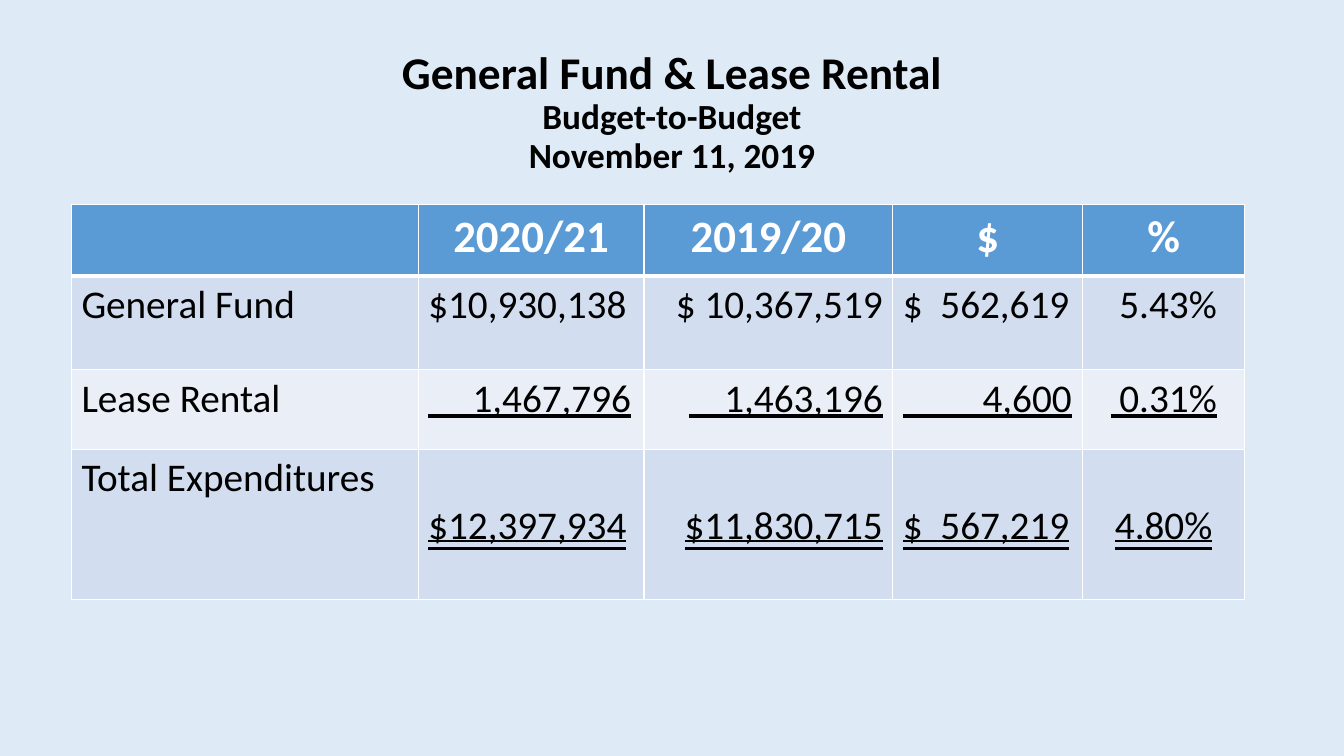
from lxml import etree
from pptx import Presentation
from pptx.dml.color import RGBColor
from pptx.enum.text import MSO_ANCHOR, MSO_AUTO_SIZE, MSO_TEXT_UNDERLINE_TYPE, PP_ALIGN
from pptx.oxml.ns import qn
from pptx.util import Cm, Pt

LEFT, CENTER, RIGHT = PP_ALIGN.LEFT, PP_ALIGN.CENTER, PP_ALIGN.RIGHT
MIDDLE = MSO_ANCHOR.MIDDLE
NO_AUTOFIT = MSO_AUTO_SIZE.NONE
SINGLE = MSO_TEXT_UNDERLINE_TYPE.SINGLE_LINE
DOUBLE = MSO_TEXT_UNDERLINE_TYPE.DOUBLE_LINE
TITLE_ONLY = 5

COLORS = {
    "background": "DEEBF7",
    "header": "5B9BD5",
    "odd": "D2DEEF",
    "even": "EAEFF7",
    "text": "000000",
    "white": "FFFFFF",
}
TITLE_LINES = [
    ("General Fund & Lease Rental", 32.4),
    ("Budget-to-Budget", 25.2),
    ("November 11, 2019", 25.2),
]
COLUMN_WIDTHS = [8.74, 5.69, 6.27, 4.78, 4.09]
ROW_HEIGHTS = [1.8, 2.36, 2.01, 3.78]
ALIGNMENTS = [LEFT, LEFT, RIGHT, LEFT, CENTER]
BUDGET = [
    ["", "2020/21", "2019/20", "$", "%"],
    ["General Fund", "$10,930,138", "$ 10,367,519", "$  562,619", " 5.43%"],
    ["Lease Rental", "     1,467,796", "    1,463,196", "         4,600", " 0.31%"],
    ["Total Expenditures", "$12,397,934", "$11,830,715", "$  567,219", "4.80%"],
]
ROW_FILLS = ["header", "odd", "even", "odd"]
UNDERLINES = [None, None, SINGLE, DOUBLE]
TOTAL_ROW = 3
TOTAL_TOP_MARGIN = 1.33


class BudgetSlide:
    """Holds the slide style and adds the title and budget table."""

    def __init__(self, deck, font="Calibri"):
        self.font = font
        self.page = deck.slides.add_slide(deck.slide_layouts[TITLE_ONLY])
        self.paint(self.page.background.fill, "background")

    def paint(self, fill, color):
        fill.solid()
        fill.fore_color.rgb = RGBColor.from_string(COLORS[color])

    def span(self, para, text, size, color="text", bold=False, underline=None):
        span = para.add_run()
        span.text = text
        span.font.name = self.font
        span.font.size = Pt(size)
        span.font.bold = bold
        span.font.underline = underline
        span.font.color.rgb = RGBColor.from_string(COLORS[color])

    def title(self, left, top, width, height, lines):
        box = self.page.shapes.title
        box.left, box.top, box.width, box.height = map(Cm, (left, top, width, height))
        frame = box.text_frame
        frame.auto_size = NO_AUTOFIT
        frame.word_wrap = True
        frame.vertical_anchor = MIDDLE
        para = frame.paragraphs[0]
        para.alignment = CENTER
        para.line_spacing = 0.9
        for index, (text, size) in enumerate(lines):
            if index:
                para.add_line_break()
                previous_size = lines[index - 1][1]
                etree.SubElement(para._p[-1], qn("a:rPr"), sz=str(round(previous_size * 100)))
            self.span(para, text, size, bold=True)

    def borders(self, cell, is_header, below_header):
        properties = cell._tc.get_or_add_tcPr()
        widths = {"L": 1, "R": 1, "T": 3 if below_header else 1, "B": 3 if is_header else 1}
        for index, (side, width) in enumerate(widths.items()):
            line = etree.Element(qn(f"a:ln{side}"), w=str(Pt(width)))
            fill = etree.SubElement(line, qn("a:solidFill"))
            etree.SubElement(fill, qn("a:srgbClr"), val=COLORS["white"])
            properties.insert(index, line)

    def cell(self, cell, text, row, column):
        is_header = row == 0
        self.paint(cell.fill, ROW_FILLS[row])
        self.borders(cell, is_header, row == 1)
        if row == TOTAL_ROW and column:
            cell.margin_top = Cm(TOTAL_TOP_MARGIN)
        para = cell.text_frame.paragraphs[0]
        para.alignment = CENTER if is_header else ALIGNMENTS[column]
        if is_header and text:
            self.span(para, text, 32, "white", bold=True)
        elif text:
            self.span(para, text, 28, underline=UNDERLINES[row] if column else None)

    def table(self, left, top, rows):
        width, height = sum(COLUMN_WIDTHS), sum(ROW_HEIGHTS)
        frame = self.page.shapes.add_table(
            len(rows), len(COLUMN_WIDTHS), Cm(left), Cm(top), Cm(width), Cm(height))
        table = frame.table
        for column, column_width in zip(table.columns, COLUMN_WIDTHS):
            column.width = Cm(column_width)
        for row, row_height in zip(table.rows, ROW_HEIGHTS):
            row.height = Cm(row_height)
        for row, texts in enumerate(rows):
            for column, text in enumerate(texts):
                self.cell(table.cell(row, column), text, row, column)


def main():
    deck = Presentation()
    deck.slide_width, deck.slide_height = Cm(33.87), Cm(19.05)
    slide = BudgetSlide(deck)
    slide.title(2.33, 1.01, 29.21, 3.68, TITLE_LINES)
    slide.table(1.8, 5.16, BUDGET)
    deck.save("out.pptx")


if __name__ == "__main__":
    main()
